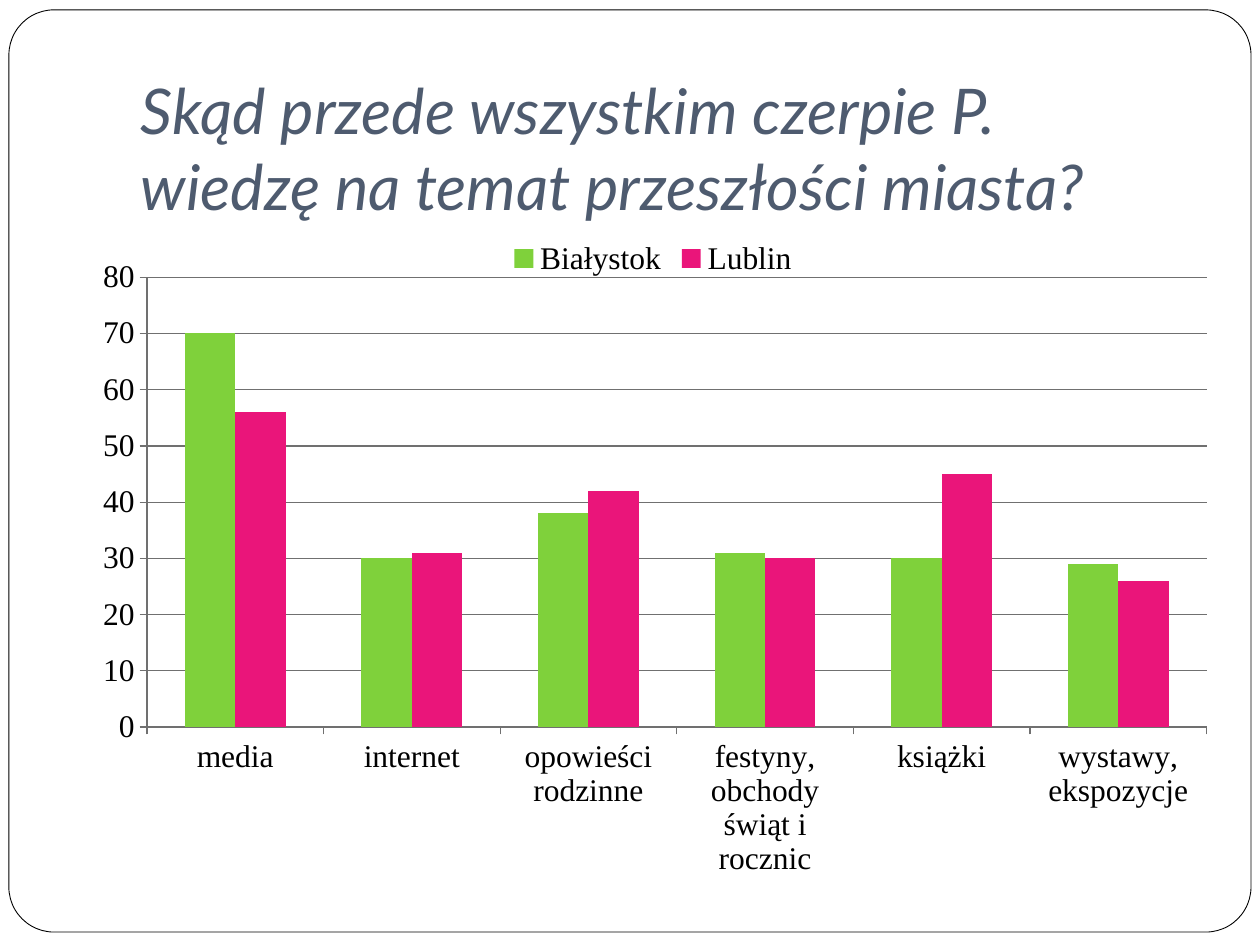
from dataclasses import dataclass
from typing import Any

from lxml.etree import SubElement
from pptx import Presentation
from pptx.chart.data import CategoryChartData
from pptx.dml.color import RGBColor
from pptx.enum.chart import XL_CHART_TYPE, XL_LEGEND_POSITION, XL_TICK_MARK
from pptx.enum.shapes import MSO_SHAPE
from pptx.enum.text import MSO_ANCHOR
from pptx.oxml.ns import qn
from pptx.util import Cm, Pt

TITLE = "Skąd przede wszystkim czerpie P. wiedzę na temat przeszłości miasta?"
CATEGORIES = [
    "media",
    "internet",
    "opowieści rodzinne",
    "festyny, obchody świąt i rocznic",
    "książki",
    "wystawy, ekspozycje",
]
GRID_COLOR = "707070"


@dataclass(frozen=True)
class Box:
    left: float
    top: float
    width: float
    height: float

    def lengths(self) -> tuple:
        return Cm(self.left), Cm(self.top), Cm(self.width), Cm(self.height)


@dataclass(frozen=True)
class City:
    name: str
    values: tuple
    color: str


CITIES = [
    City("Białystok", (70, 30, 38, 31, 30, 29), "7FD13B"),
    City("Lublin", (56, 31, 42, 30, 45, 26), "EA157A"),
]


def color(value: str) -> RGBColor:
    return RGBColor.from_string(value)


def apply_format(target: Any, values: dict) -> None:
    for name, value in values.items():
        setattr(target, name, value)


def fill_solid(format_part: Any, value: str) -> None:
    format_part.fill.solid()
    format_part.fill.fore_color.rgb = color(value)


def style_line(line: Any, value: str, width: float) -> None:
    line.color.rgb = color(value)
    line.width = Pt(width)


def place(element: Any, index: int, values: dict) -> None:
    for existing in element.findall(qn("c:layout")):
        element.remove(existing)
    layout = SubElement(element, qn("c:layout"))
    element.insert(index, layout)
    manual = SubElement(layout, qn("c:manualLayout"))
    for name, value in values.items():
        SubElement(manual, qn(f"c:{name}")).set("val", str(value))


def add_frame(slide: Any, box: Box) -> None:
    frame = slide.shapes.add_shape(MSO_SHAPE.ROUNDED_RECTANGLE, *box.lengths())
    frame.adjustments[0] = 0.049
    frame.shadow.inherit = False
    fill_solid(frame, "FFFFFF")
    style_line(frame.line, "000000", 0.5)


def add_title(slide: Any, box: Box) -> None:
    text_frame = slide.shapes.add_textbox(*box.lengths()).text_frame
    apply_format(text_frame, {
        "word_wrap": True,
        "vertical_anchor": MSO_ANCHOR.BOTTOM,
        "margin_left": Cm(0.25),
        "margin_right": Cm(0.25),
        "margin_top": Cm(0.13),
        "margin_bottom": Cm(0.25),
    })
    run = text_frame.paragraphs[0].add_run()
    run.text = TITLE
    apply_format(run.font, {"name": "Lato", "size": Pt(36), "italic": True})
    run.font.color.rgb = color("4E5B6F")


def add_city_chart(slide: Any, box: Box) -> None:
    data = CategoryChartData()
    data.categories = CATEGORIES
    for city in CITIES:
        data.add_series(city.name, city.values)
    chart = slide.shapes.add_chart(
        XL_CHART_TYPE.COLUMN_CLUSTERED, *box.lengths(), data
    ).chart
    apply_format(chart, {"has_title": False, "has_legend": True})
    apply_format(chart.font, {"name": "Times New Roman", "size": Pt(18)})
    chart.font.color.rgb = color("000000")
    apply_format(chart.legend, {
        "position": XL_LEGEND_POSITION.TOP,
        "include_in_layout": False,
    })

    plot = chart.plots[0]
    apply_format(plot, {"gap_width": 150, "overlap": 0, "vary_by_categories": False})
    for series, city in zip(plot.series, CITIES):
        fill_solid(series.format, city.color)

    for axis in (chart.category_axis, chart.value_axis):
        axis.major_tick_mark = XL_TICK_MARK.OUTSIDE
        style_line(axis.format.line, GRID_COLOR, 0.75)
    apply_format(chart.value_axis, {
        "minimum_scale": 0,
        "maximum_scale": 80,
        "major_unit": 10,
        "has_major_gridlines": True,
    })
    style_line(chart.value_axis.major_gridlines.format.line, GRID_COLOR, 0.75)

    plot_area = chart.element.find(".//" + qn("c:plotArea"))
    legend = chart.element.find(".//" + qn("c:legend"))
    place(plot_area, 0, {
        "layoutTarget": "inner", "xMode": "edge", "yMode": "edge",
        "x": 0.06, "y": 0.12, "w": 0.92, "h": 0.64,
    })
    place(legend, 1, {"xMode": "edge", "yMode": "edge", "x": 0.37, "y": 0.06})


def main() -> None:
    presentation = Presentation()
    apply_format(presentation, {"slide_width": Cm(25.4), "slide_height": Cm(19.05)})
    slide = presentation.slides.add_slide(presentation.slide_layouts[6])
    add_frame(slide, Box(0.18, 0.2, 25.04, 18.59))
    add_title(slide, Box(2.59, 0.58, 21.46, 4.17))
    add_city_chart(slide, Box(1.57, 3.89, 23.22, 14.17))
    presentation.save("out.pptx")


if __name__ == "__main__":
    main()
